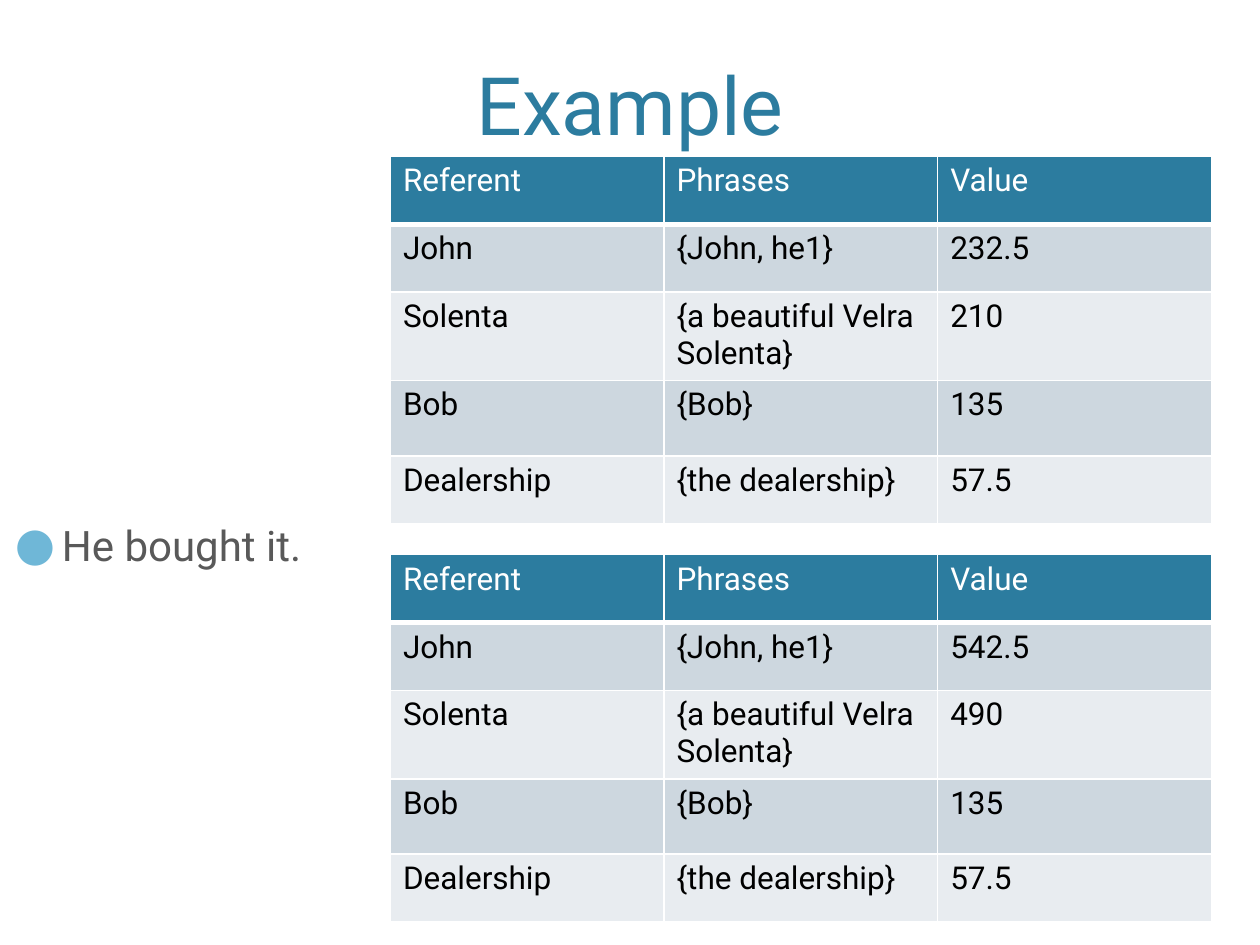
from lxml.etree import SubElement
from pptx import Presentation
from pptx.dml.color import RGBColor
from pptx.enum.text import MSO_ANCHOR, PP_ALIGN
from pptx.oxml.ns import qn
from pptx.util import Cm, Pt

TITLE = "Example"
POINT = "He bought it."
HEAD = ("Referent", "Phrases", "Value")
NAMES = [
    ("John", "{John, he1}"),
    ("Solenta", "{a beautiful Velra Solenta}"),
    ("Bob", "{Bob}"),
    ("Dealership", "{the dealership}"),
]
VALUES = [("232.5", "210", "135", "57.5"), ("542.5", "490", "135", "57.5")]
TOPS = (3.15, 11.18)
LEFT, WIDE = 7.87, 16.55
ROWS = (1.37, 1.37, 1.52, 1.52, 1.37)
BLUE, WHITE, BANDS = "2C7C9F", "FFFFFF", ("E8ECF0", "CDD7DF")


def color(code):
    return RGBColor.from_string(code)


def style(font, code, **form):
    for key, val in {"name": "Roboto", "bold": False, **form}.items():
        setattr(font, key, val)
    font.color.rgb = color(code)


def add_text(slide, text, box, size, code, **form):
    """Add a one-paragraph text box and return its paragraph."""
    frame = slide.shapes.add_textbox(*map(Cm, box)).text_frame
    for key, val in {"word_wrap": True, **form}.items():
        setattr(frame, key, val)
    para = frame.paragraphs[0]
    run = para.add_run()
    run.text = text
    style(run.font, code, size=Pt(size))
    return para


def add_bullet(para):
    props = para._p.get_or_add_pPr()
    props.set("marL", str(Cm(0.95)))
    props.set("indent", str(-Cm(0.95)))
    tint = SubElement(props, qn("a:buClr"))
    SubElement(tint, qn("a:srgbClr"), val="6FB7D7")
    SubElement(props, qn("a:buSzPct"), val="110000")
    SubElement(props, qn("a:buFont"), typeface="Roboto")
    SubElement(props, qn("a:buChar"), char="●")


def add_edges(cell, base):
    """Draw white borders, the bottom one base points wide."""
    props = cell._tc.get_or_add_tcPr()
    for at, (side, wide) in enumerate(zip("LRTB", (1, 1, 1, base))):
        line = SubElement(props, qn(f"a:ln{side}"), w=str(Pt(wide)))
        fill = SubElement(line, qn("a:solidFill"))
        SubElement(fill, qn("a:srgbClr"), val=WHITE)
        props.insert(at, line)


def add_grid(slide, top, values):
    data = [HEAD] + [(*pair, val) for pair, val in zip(NAMES, values)]
    box = map(Cm, (LEFT, top, WIDE, sum(ROWS)))
    table = slide.shapes.add_table(len(data), len(HEAD), *box).table
    for col in table.columns:
        col.width = Cm(WIDE / len(HEAD))
    for r, (row, high) in enumerate(zip(data, ROWS)):
        table.rows[r].height = Cm(high)
        for c, text in enumerate(row):
            cell = table.cell(r, c)
            cell.text = text
            cell.fill.solid()
            cell.fill.fore_color.rgb = color(BANDS[r % 2] if r else BLUE)
            run = cell.text_frame.paragraphs[0].runs[0]
            style(run.font, "000000" if r else WHITE, size=Pt(18))
            add_edges(cell, 1 if r else 3)


def main():
    deck = Presentation()
    deck.slide_width, deck.slide_height = Cm(25.4), Cm(19.05)
    slide = deck.slides.add_slide(deck.slide_layouts[6])
    title = add_text(slide, TITLE, (1.9, 0, 21.6, 3.18), 46, BLUE,
                     vertical_anchor=MSO_ANCHOR.BOTTOM)
    title.alignment = PP_ALIGN.CENTER
    point = add_text(slide, POINT, (0.05, 10.34, 21.6, 1.9), 24, "595959")
    point.space_before = Pt(20)
    add_bullet(point)
    for top, values in zip(TOPS, VALUES):
        add_grid(slide, top, values)
    deck.save("out.pptx")


if __name__ == "__main__":
    main()
